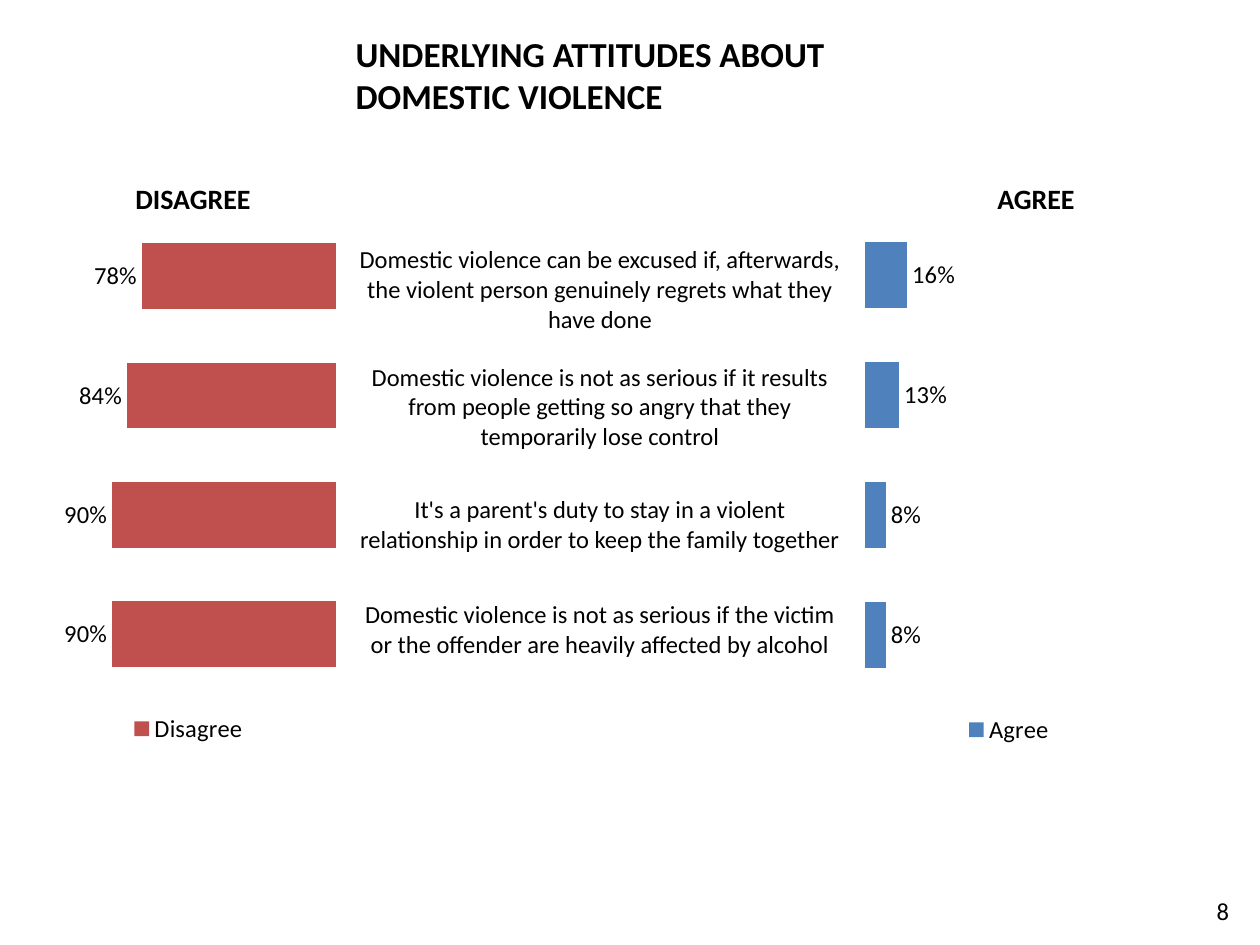
import pptx
import pptx.chart.data
import pptx.dml.color
import pptx.enum.chart
import pptx.enum.text
import pptx.oxml
import pptx.oxml.ns
import pptx.util

RGBColor = pptx.dml.color.RGBColor
BLACK = RGBColor(0x00, 0x00, 0x00)
BLUE = RGBColor(0x4F, 0x81, 0xBD)
RED = RGBColor(0xC0, 0x50, 0x4D)
CENTER = pptx.enum.text.PP_ALIGN.CENTER
LEFT = pptx.enum.text.PP_ALIGN.LEFT
EMU_PER_PX = 914400 / 126

STATEMENTS = [
    "Domestic violence can be excused if, afterwards, the violent person "
    "genuinely regrets what they have done",
    "Domestic violence is not as serious if it results from people getting "
    "so angry that they temporarily lose control",
    "It's a parent's duty to stay in a violent relationship in order to "
    "keep the family together",
    "Domestic violence is not as serious if the victim or the offender are "
    "heavily affected by alcohol",
]


def px(length):
    return pptx.util.Emu(round(length * EMU_PER_PX))


class SlideBuilder:
    def __init__(self, slide, font_name, color):
        self.slide = slide
        self.font_name = font_name
        self.color = color

    def style_font(self, font, size, bold=False):
        font.name = self.font_name
        font.size = pptx.util.Pt(size)
        font.bold = bold
        font.color.rgb = self.color

    def fill_text(self, text_frame, text, size, bold=False, alignment=CENTER):
        text_frame.word_wrap = True
        paragraph = text_frame.paragraphs[0]
        paragraph.alignment = alignment
        run = paragraph.add_run()
        run.text = text
        self.style_font(run.font, size, bold)

    def title(self, text, left, top, width, height):
        shape = self.slide.shapes.title
        shape.left, shape.top, shape.width, shape.height = map(
            px, (left, top, width, height))
        text_frame = shape.text_frame
        text_frame.auto_size = pptx.enum.text.MSO_AUTO_SIZE.NONE
        text_frame.vertical_anchor = pptx.enum.text.MSO_ANCHOR.TOP
        self.fill_text(text_frame, text, 20, bold=True, alignment=LEFT)

    def label(self, text, left, top, width, height, size, bold=False):
        shape = self.slide.shapes.add_textbox(*map(px, (left, top, width, height)))
        self.fill_text(shape.text_frame, text, size, bold)

    def bar_chart(self, name, values, color, box, plot, reverse=False):
        """Add a bar chart; plot is the inner plot area as fractions of the chart."""
        data = pptx.chart.data.CategoryChartData(number_format="0%")
        data.categories = ["1", "2", "3", "4"]
        data.add_series(name, values)
        chart = self.slide.shapes.add_chart(
            pptx.enum.chart.XL_CHART_TYPE.BAR_CLUSTERED, *map(px, box), data).chart
        self.style_font(chart.font, 18)
        chart.has_title = False
        chart.has_legend = True
        chart.legend.position = pptx.enum.chart.XL_LEGEND_POSITION.BOTTOM
        chart.legend.include_in_layout = False
        self.style_font(chart.legend.font, 14)

        chart.category_axis.visible = False
        value_axis = chart.value_axis
        value_axis.visible = False
        value_axis.has_major_gridlines = False
        value_axis.minimum_scale = 0
        value_axis.maximum_scale = 1.1
        value_axis.reverse_order = reverse

        bars = chart.plots[0]
        bars.gap_width = 81
        bars.vary_by_categories = False
        bars.series[0].format.fill.solid()
        bars.series[0].format.fill.fore_color.rgb = color
        bars.has_data_labels = True
        labels = bars.data_labels
        labels.show_value = True
        labels.number_format = "0%"
        labels.number_format_is_linked = False
        labels.position = pptx.enum.chart.XL_LABEL_POSITION.OUTSIDE_END
        self.style_font(labels.font, 14)
        self.place_plot(chart, plot)

    def place_plot(self, chart, plot):
        left, top, width, height = plot
        plot_area = chart.plots[0]._element.getparent()
        for layout in plot_area.findall(pptx.oxml.ns.qn("c:layout")):
            plot_area.remove(layout)
        plot_area.insert(0, pptx.oxml.parse_xml(
            f'<c:layout {pptx.oxml.ns.nsdecls("c")}><c:manualLayout>'
            '<c:layoutTarget val="inner"/>'
            '<c:xMode val="edge"/><c:yMode val="edge"/>'
            f'<c:x val="{left}"/><c:y val="{top}"/>'
            f'<c:w val="{width}"/><c:h val="{height}"/>'
            '</c:manualLayout></c:layout>'))

    def statement_table(self, statements, left, top, width, row_heights):
        table = self.slide.shapes.add_table(
            len(statements), 1,
            *map(px, (left, top, width, sum(row_heights)))).table
        table.first_row = False
        table.horz_banding = False
        for row, height, statement in zip(table.rows, row_heights, statements):
            row.height = px(height)
            cell = row.cells[0]
            cell.fill.background()
            cell.vertical_anchor = pptx.enum.text.MSO_ANCHOR.MIDDLE
            cell.margin_left = cell.margin_top = cell.margin_right = px(1)
            cell.margin_bottom = 0
            self.fill_text(cell.text_frame, statement, 14)


def main():
    presentation = pptx.Presentation()
    presentation.slide_width = px(1260)
    presentation.slide_height = px(945)
    slide = presentation.slides.add_slide(presentation.slide_layouts[5])
    builder = SlideBuilder(slide, "Calibri", BLACK)

    builder.title("UNDERLYING ATTITUDES ABOUT DOMESTIC VIOLENCE", 343, 26, 655, 97)
    builder.bar_chart("Agree", [0.08, 0.08, 0.13, 0.16], BLUE,
                      (845, 204, 328, 546), (0.06, 0.02, 0.89, 0.88))
    builder.bar_chart("Disagree", [0.90, 0.90, 0.84, 0.78], RED,
                      (35, 200, 307, 549), (0.09, 0.03, 0.89, 0.87), reverse=True)
    for text, left in (("AGREE", 907), ("DISAGREE", 64)):
        builder.label(text, left, 175, 258, 47, 16, bold=True)
    builder.statement_table(STATEMENTS, 353, 237, 494, [105, 130, 105, 105])
    builder.label("8", 1186, 890, 74, 55, 14)

    presentation.save("out.pptx")


if __name__ == "__main__":
    main()
